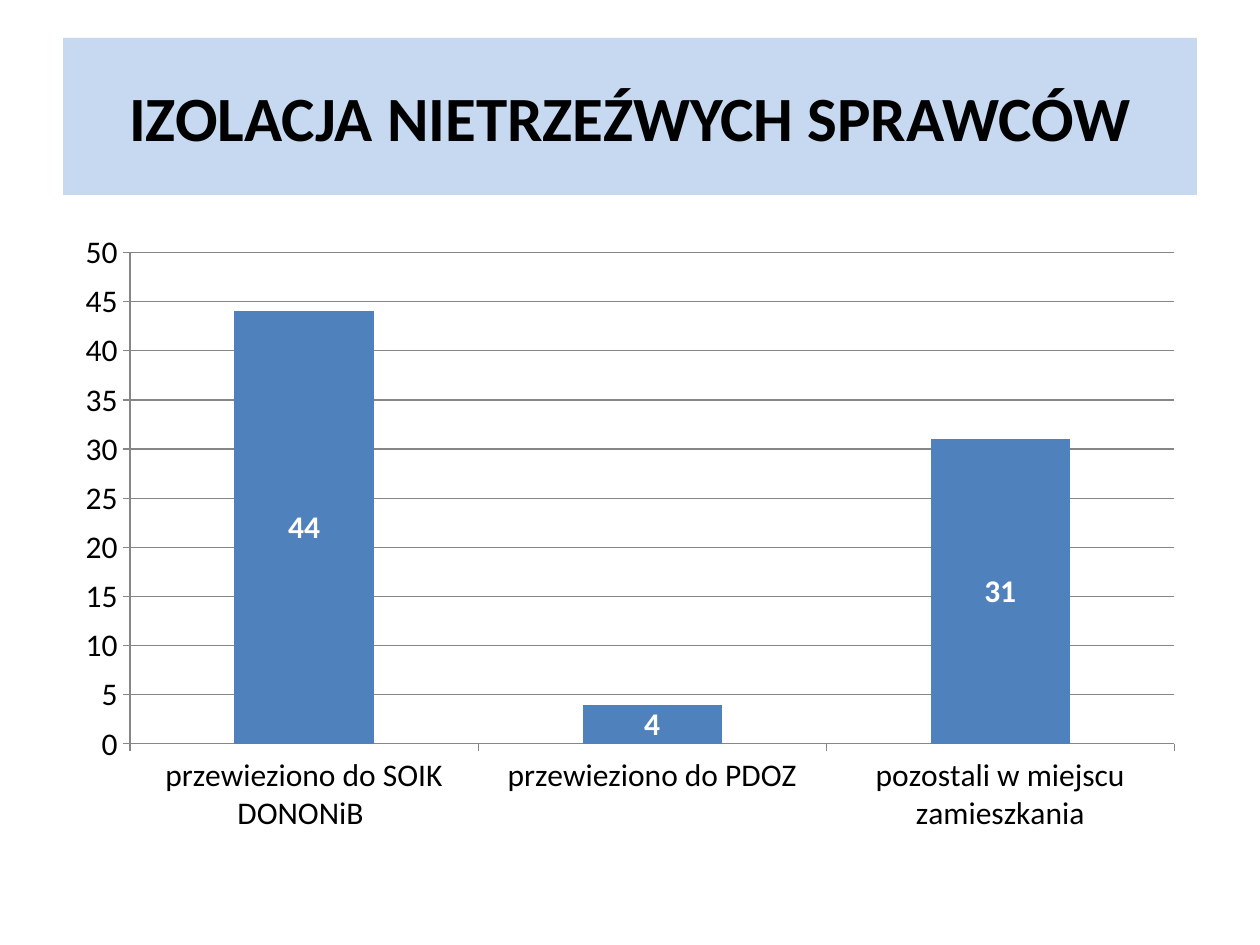
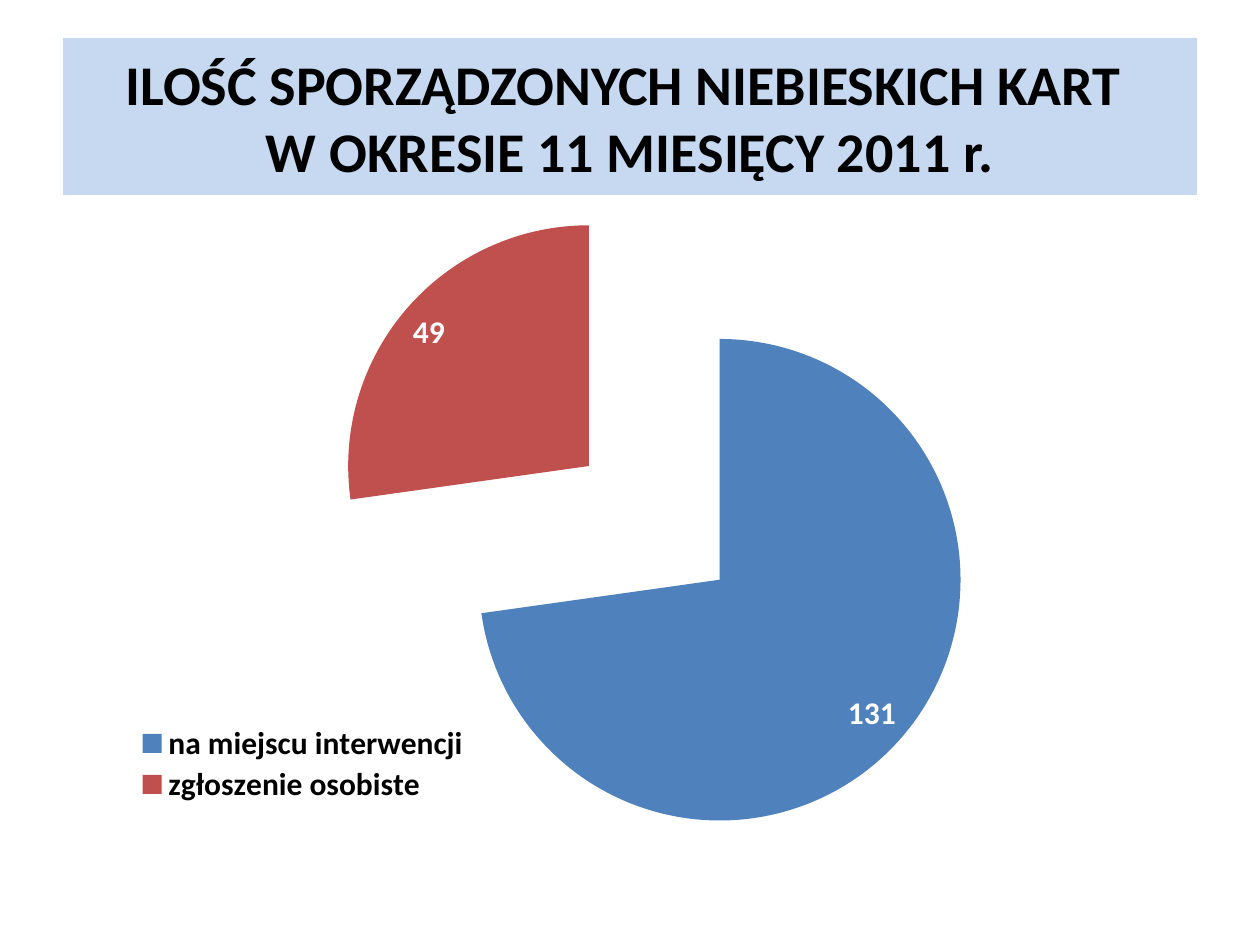
import pptx
import pptx.util
import pptx.dml.color
import pptx.chart.data
import pptx.enum.chart
import pptx.enum.text
import pptx.oxml
import pptx.oxml.ns

EMU = 914400 / 126
FONT = "Calibri"
HUES = {"band": "C6D9F1", "text": "000000", "blue": "4F81BD",
        "red": "C0504D", "white": "FFFFFF", "grid": "868686"}
enums = pptx.enum.chart
NS = pptx.oxml.ns.nsdecls("c")
qn = pptx.oxml.ns.qn


def style(font, size, hue, bold=False):
    font.name = FONT
    font.size = pptx.util.Pt(size)
    font.bold = bold
    font.color.rgb = pptx.dml.color.RGBColor.from_string(HUES[hue])


def place(node, index, inner, *rect):
    for old in node.findall(qn("c:layout")):
        node.remove(old)
    target = '<c:layoutTarget val="inner"/>' if inner else ""
    modes = "".join(f'<c:{key}Mode val="edge"/>' for key in "xy")
    sizes = "".join(f'<c:{key} val="{val}"/>' for key, val in zip("xywh", rect))
    node.insert(index, pptx.oxml.parse_xml(
        f"<c:layout {NS}><c:manualLayout>{target}{modes}{sizes}"
        "</c:manualLayout></c:layout>"))


pages = [
    ("IZOLACJA NIETRZEŹWYCH SPRAWCÓW", 36, enums.XL_CHART_TYPE.COLUMN_CLUSTERED,
     (63, 221, 1134, 624), enums.XL_LABEL_POSITION.CENTER,
     {"przewieziono do SOIK DONONiB ": 44, "przewieziono do PDOZ": 4,
      "pozostali w miejscu zamieszkania": 31}),
    ("ILOŚĆ SPORZĄDZONYCH NIEBIESKICH KART \vW OKRESIE 11 MIESIĘCY 2011 r.", 32,
     enums.XL_CHART_TYPE.PIE, (64, 204, 1111, 655),
     enums.XL_LABEL_POSITION.INSIDE_END,
     {"na miejscu interwencji": 131, "zgłoszenie osobiste": 49}),
]

deck = pptx.Presentation()
deck.slide_width = round(1260 * EMU)
deck.slide_height = round(945 * EMU)
charts = []

for words, size, kind, box, spot, values in pages:
    slide = deck.slides.add_slide(deck.slide_layouts[5])
    title = slide.shapes.title
    title.left, title.top, title.width, title.height = [
        round(n * EMU) for n in (63, 38, 1134, 157)]
    title.fill.solid()
    title.fill.fore_color.rgb = pptx.dml.color.RGBColor.from_string(HUES["band"])
    title.text_frame.text = words
    title.text_frame.vertical_anchor = pptx.enum.text.MSO_ANCHOR.MIDDLE
    para = title.text_frame.paragraphs[0]
    para.alignment = pptx.enum.text.PP_ALIGN.CENTER
    style(para.font, size, "text", True)

    data = pptx.chart.data.CategoryChartData()
    data.categories = list(values)
    data.add_series("Series 1", list(values.values()))
    chart = slide.shapes.add_chart(kind, *[round(n * EMU) for n in box], data).chart
    chart.has_title = False
    chart.has_legend = False
    style(chart.font, 18, "text")
    plot = chart.plots[0]
    plot.vary_by_categories = kind == enums.XL_CHART_TYPE.PIE
    plot.has_data_labels = True
    labels = plot.data_labels
    labels.show_value = True
    labels.show_percentage = False
    labels.position = spot
    style(labels.font, 18, "white", True)
    charts.append(chart)

bars, pie = charts

bars.plots[0].gap_width = 150
fill = bars.plots[0].series[0].format.fill
fill.solid()
fill.fore_color.rgb = pptx.dml.color.RGBColor.from_string(HUES["blue"])
scale = bars.value_axis
scale.minimum_scale, scale.maximum_scale, scale.major_unit = 0, 50, 5
scale.has_major_gridlines = True
for axis in (scale, bars.category_axis):
    axis.major_tick_mark = enums.XL_TICK_MARK.OUTSIDE
for part in (scale, scale.major_gridlines, bars.category_axis):
    part.format.line.width = pptx.util.Pt(0.75)
    part.format.line.color.rgb = pptx.dml.color.RGBColor.from_string(HUES["grid"])

series = pie.plots[0].series[0]
for i, (hue, shift) in enumerate([("blue", 47), ("red", 25)]):
    fill = series.points[i].format.fill
    fill.solid()
    fill.fore_color.rgb = pptx.dml.color.RGBColor.from_string(HUES[hue])
    slot = series._element.findall(qn("c:dPt"))[i].find(qn("c:spPr"))
    slot.addprevious(pptx.oxml.parse_xml(f'<c:explosion {NS} val="{shift}"/>'))
series._element.find(qn("c:dPt")).addprevious(
    pptx.oxml.parse_xml(f'<c:explosion {NS} val="25"/>'))
place(pie.plots[0]._element.getparent(), 0, True, 0.125, 0.001, 0.777, 0.919)

pie.has_legend = True
pie.legend.position = enums.XL_LEGEND_POSITION.RIGHT
pie.legend.include_in_layout = False
style(pie.legend.font, 18, "text", True)
place(pie.legend._element, 1, False, 0.06, 0.79, 0.31, 0.13)

deck.save("out.pptx")
